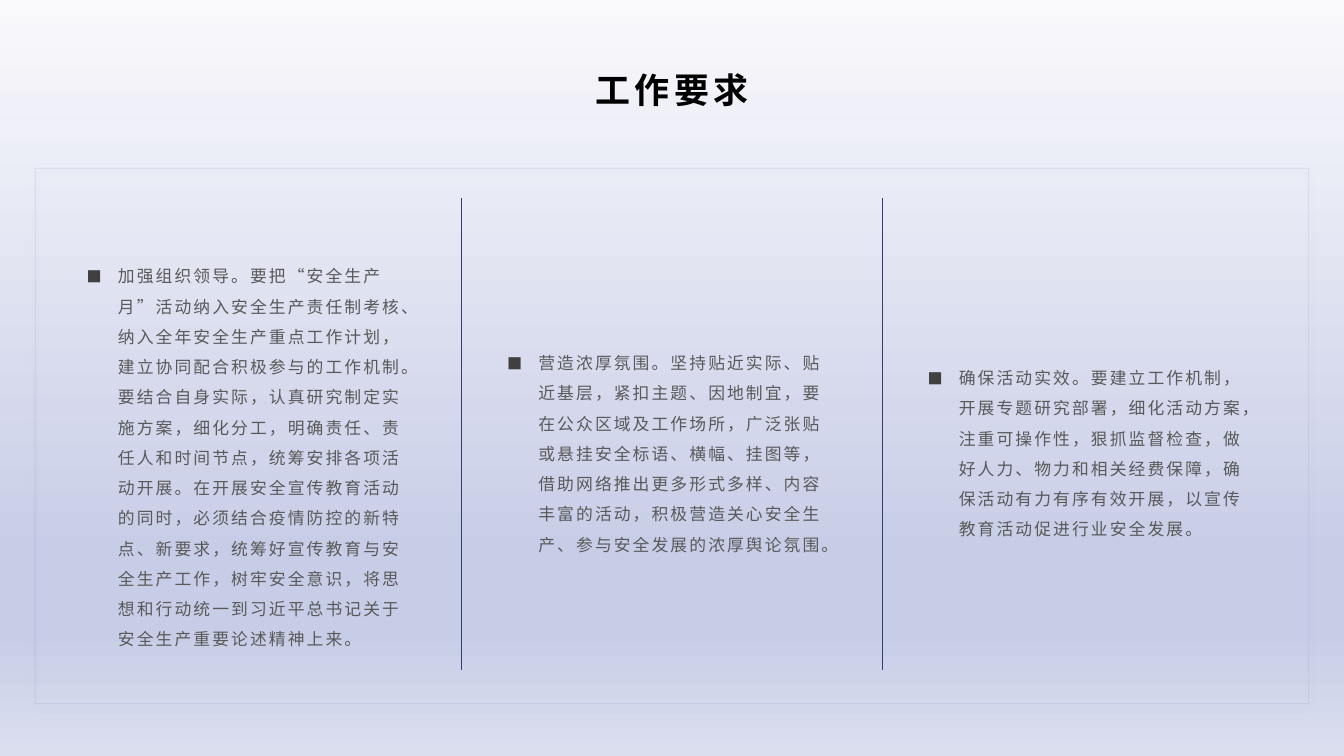
from dataclasses import dataclass

from lxml import etree
from pptx import Presentation
from pptx.dml.color import RGBColor
from pptx.enum.shapes import MSO_CONNECTOR, MSO_SHAPE
from pptx.enum.text import MSO_ANCHOR, MSO_AUTO_SIZE, PP_ALIGN
from pptx.oxml.ns import qn
from pptx.util import Inches, Pt

STRAIGHT = MSO_CONNECTOR.STRAIGHT
RECTANGLE = MSO_SHAPE.RECTANGLE
MIDDLE, BOTTOM = MSO_ANCHOR.MIDDLE, MSO_ANCHOR.BOTTOM
CENTER, LEFT = PP_ALIGN.CENTER, PP_ALIGN.LEFT
COMPARISON_LAYOUT = 4


@dataclass(frozen=True)
class Theme:
    font: str = "Noto Sans CJK SC"
    title_size: float = 25
    body_size: float = 12
    title: str = "000000"
    body: str = "595959"
    bullet: str = "404040"
    divider: str = "333D75"
    frame: str = "8590CA"
    shadow: str = "000000"
    backdrop: tuple = ((0, "F9F9FC"), (74, "C8CDE7"), (83, "C8CDE7"), (100, "DADEEF"))


THEME = Theme()

TITLE = "工作要求"
# Placeholder index, top of the column, text
REQUIREMENTS = [
    (1, 2.33, "加强组织领导。要把“安全生产月”活动纳入安全生产责任制考核、纳入全年安全生产重点工作计划，"
     "建立协同配合积极参与的工作机制。要结合自身实际，认真研究制定实施方案，细化分工，明确责任、"
     "责任人和时间节点，统筹安排各项活动开展。在开展安全宣传教育活动的同时，必须结合疫情防控的新特点、"
     "新要求，统筹好宣传教育与安全生产工作，树牢安全意识，将思想和行动统一到习近平总书记关于"
     "安全生产重要论述精神上来。"),
    (2, 2.29, "营造浓厚氛围。坚持贴近实际、贴近基层，紧扣主题、因地制宜，要在公众区域及工作场所，"
     "广泛张贴或悬挂安全标语、横幅、挂图等，借助网络推出更多形式多样、内容丰富的活动，"
     "积极营造关心安全生产、参与安全发展的浓厚舆论氛围。"),
    (4, 2.29, "确保活动实效。要建立工作机制，开展专题研究部署，细化活动方案，注重可操作性，狠抓监督检查，"
     "做好人力、物力和相关经费保障，确保活动有力有序有效开展，以宣传教育活动促进行业安全发展。"),
]


def add_xml(parent, tag, **attributes):
    return etree.SubElement(parent, qn(tag), {k: str(v) for k, v in attributes.items()})


def place(shape, left, top, width, height):
    shape.left, shape.top = Inches(left), Inches(top)
    shape.width, shape.height = Inches(width), Inches(height)


def write(placeholder, text, size, color, bold, tracking, anchor, align, spacing):
    frame = placeholder.text_frame
    frame.text = text
    frame.word_wrap = True
    frame.auto_size = MSO_AUTO_SIZE.NONE
    frame.vertical_anchor = anchor
    paragraph = frame.paragraphs[0]
    paragraph.alignment, paragraph.line_spacing = align, spacing
    paragraph.space_before = Pt(0)
    font = paragraph.font
    font.name, font.size, font.bold = THEME.font, Pt(size), bold
    font.color.rgb = RGBColor.from_string(color)
    properties = paragraph._p.pPr.find(qn("a:defRPr"))
    properties.set("spc", str(int(tracking * 100)))
    add_xml(properties, "a:ea", typeface=THEME.font)
    return paragraph


def set_bullet(paragraph, indent):
    properties = paragraph._p.pPr
    properties.set("marL", str(Inches(indent)))
    properties.set("indent", str(-Inches(indent)))
    color = add_xml(properties, "a:buClr")
    add_xml(color, "a:srgbClr", val=THEME.bullet)
    add_xml(properties, "a:buSzPct", val=90000)
    add_xml(properties, "a:buFont", typeface=THEME.font)
    add_xml(properties, "a:buChar", char="■")
    # Run defaults come after the bullet settings
    properties.append(properties.find(qn("a:defRPr")))


def paint_background(slide):
    fill = slide.background.fill
    fill.gradient()
    fill.gradient_angle = 270
    stops = slide._element.find(".//" + qn("a:gsLst"))
    for stop in list(stops):
        stops.remove(stop)
    for percent, color in THEME.backdrop:
        stop = add_xml(stops, "a:gs", pos=percent * 1000)
        add_xml(stop, "a:srgbClr", val=color)


def add_frame(slide, left, top, width, height):
    frame = slide.shapes.add_shape(
        RECTANGLE, Inches(left), Inches(top), Inches(width), Inches(height))
    frame.fill.background()
    frame.line.width = Pt(0.5)
    frame.line.color.rgb = RGBColor.from_string(THEME.frame)
    outline = frame.line._ln.find(".//" + qn("a:srgbClr"))
    add_xml(outline, "a:alpha", val=20000)
    # Soft shadow straight below
    frame.shadow.inherit = False
    effects = frame._element.spPr.find(qn("a:effectLst"))
    shadow = add_xml(effects, "a:outerShdw", blurRad=Pt(4), dist=Pt(3),
                     dir=90 * 60000, algn="t", rotWithShape=0)
    color = add_xml(shadow, "a:srgbClr", val=THEME.shadow)
    add_xml(color, "a:alpha", val=40000)


def add_title(slide, left, top, width, height):
    title = slide.shapes.title
    place(title, left, top, width, height)
    write(title, TITLE, THEME.title_size, THEME.title, True, 3, BOTTOM, CENTER, 0.9)


def add_requirement(slide, index, text, left, top, width, height):
    requirement = slide.placeholders[index]
    place(requirement, left, top, width, height)
    paragraph = write(requirement, text, THEME.body_size, THEME.body, False, 1.5,
                      MIDDLE, LEFT, 1.5)
    paragraph.space_after = Pt(10)
    set_bullet(paragraph, 0.31)


def add_divider(slide, x, top, height):
    divider = slide.shapes.add_connector(
        STRAIGHT, Inches(x), Inches(top), Inches(x), Inches(top + height))
    divider.line.width = Pt(0.5)
    divider.line.color.rgb = RGBColor.from_string(THEME.divider)
    add_xml(divider._element.spPr, "a:effectLst")


def build_requirements_slide(deck):
    slide = deck.slides.add_slide(deck.slide_layouts[COMPARISON_LAYOUT])
    paint_background(slide)
    left, width, pitch = 0.35, 12.63, 4.17
    add_frame(slide, left, 1.67, width, 5.31)
    add_title(slide, left, 0.57, width, 0.58)
    # Three columns with a divider between neighbours
    for column, (index, top, text) in enumerate(REQUIREMENTS):
        add_requirement(slide, index, text, left + 0.41 + column * pitch, top, 3.46, 4.32)
        if column:
            add_divider(slide, left + 0.06 + column * pitch, 1.96, 4.69)
    # Remove the placeholder that stays empty
    spare = slide.placeholders[3]._element
    spare.getparent().remove(spare)


def main():
    deck = Presentation()
    deck.slide_width, deck.slide_height = Inches(13.33), Inches(7.5)
    build_requirements_slide(deck)
    deck.save("out.pptx")


if __name__ == "__main__":
    main()
